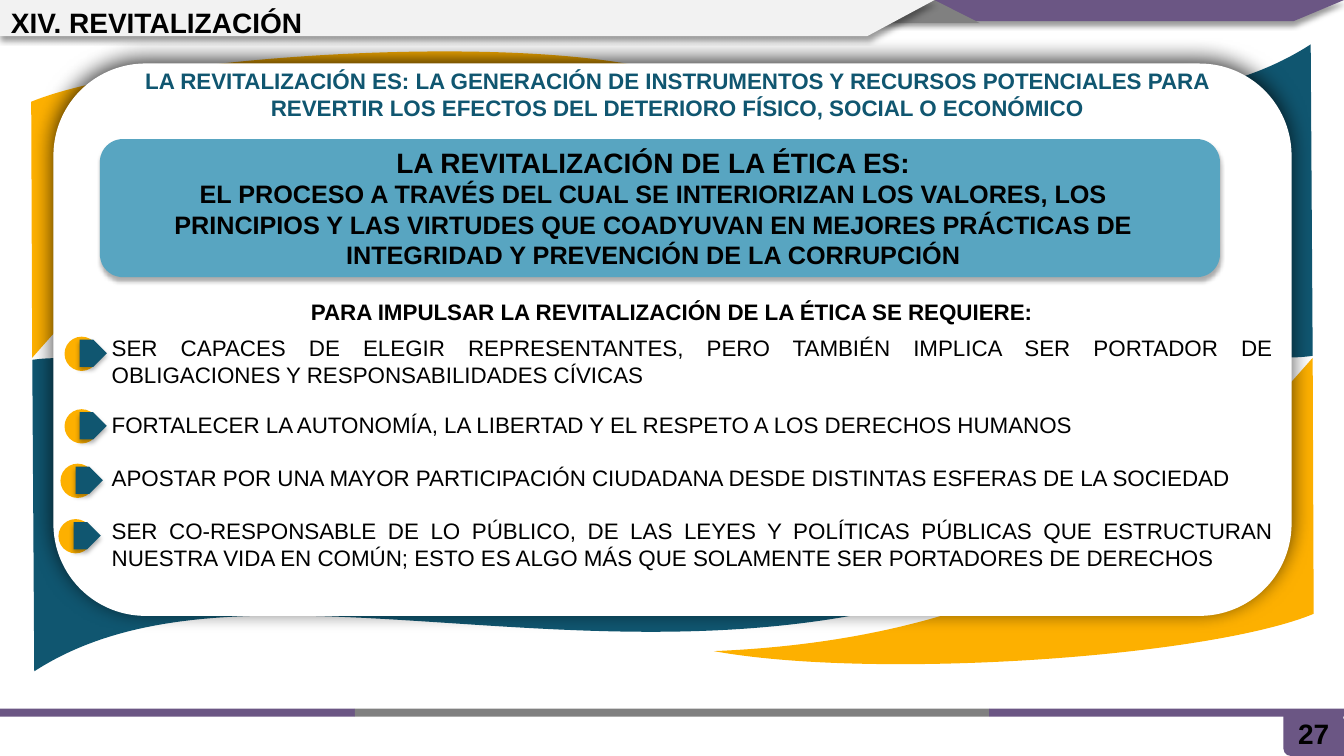
from dataclasses import dataclass

from lxml import etree
from pptx import Presentation
from pptx.dml.color import RGBColor
from pptx.enum.shapes import MSO_SHAPE as Preset
from pptx.enum.text import MSO_ANCHOR as Anchor, PP_ALIGN as Align
from pptx.oxml.ns import qn
from pptx.util import Inches, Pt


@dataclass(frozen=True)
class Theme:
    """Colours, font and type sizes of the slide."""
    purple: str = "6B5684"
    grey: str = "808080"
    pale: str = "F2F2F2"
    teal: str = "105670"
    amber: str = "FDB000"
    sky: str = "58A5C1"
    white: str = "FFFFFF"
    black: str = "000000"
    font: str = "Arial"
    heading: int = 20
    strong: int = 18
    body: int = 16


THEME = Theme()
WIDTH, HEIGHT = 13.33, 7.5
CENTRE_X, CENTRE_Y = 6.67, 3.55
HEADER_SHADOW = (40, 4, 3, 90)
SOFT_SHADOW = (32, 3.5, 2.2, 90)
FRAME_SHADOW = (75, 15, 3, 270)

TEAL_BOUNDS = (0.32, 3.55, 10.41, 3.11)
TEAL_SWOOSH = [
    [(0.32, 3.57)],
    [(0.34, 6.66)],
    [(2.64, 5.17), (6.84, 7.4), (10.73, 5.33)],
    [(7.31, 5.89), (2.04, 3.32), (0.32, 3.57)],
]
AMBER_BOUNDS = (7.08, 3.55, 5.96, 3.04)
AMBER_SWOOSH = [
    [(13.03, 6.09)],
    [(13.02, 3.55)],
    [(11.95, 4.77), (10.52, 6.32), (7.08, 6.46)],
    [(8.68, 6.75), (11.99, 6.52), (13.03, 6.09)],
]
REQUIREMENTS = [
    "SER CAPACES DE ELEGIR REPRESENTANTES, PERO TAMBIÉN IMPLICA SER PORTADOR DE "
    "OBLIGACIONES Y RESPONSABILIDADES CÍVICAS",
    "FORTALECER LA AUTONOMÍA, LA LIBERTAD Y EL RESPETO A LOS DERECHOS HUMANOS",
    "APOSTAR POR UNA MAYOR PARTICIPACIÓN CIUDADANA DESDE DISTINTAS ESFERAS DE LA SOCIEDAD",
    "SER CO-RESPONSABLE DE LO PÚBLICO, DE LAS LEYES Y POLÍTICAS PÚBLICAS QUE ESTRUCTURAN "
    "NUESTRA VIDA EN COMÚN; ESTO ES ALGO MÁS QUE SOLAMENTE SER PORTADORES DE DERECHOS",
]
REQUIREMENT_GAPS = [0, 16, 19, 19]
PINS = [(0.64, 3.34), (0.64, 4.06), (0.6, 4.6), (0.58, 5.15)]


def paint(shape, colour, shadow=None):
    """Give a shape a plain fill, no line and an optional shadow."""
    shape.fill.solid()
    shape.fill.fore_color.rgb = RGBColor.from_string(colour)
    shape.line.fill.background()
    shape.shadow.inherit = False
    if shadow:
        alpha, blur, distance, angle = shadow
        effects = shape._element.spPr.find(qn("a:effectLst"))
        outer = etree.SubElement(
            effects, qn("a:outerShdw"), blurRad=str(Pt(blur)), dist=str(Pt(distance)),
            dir=str(angle * 60000), algn="ctr", rotWithShape="0")
        tint = etree.SubElement(outer, qn("a:srgbClr"), val=THEME.black)
        etree.SubElement(tint, qn("a:alpha"), val=str(alpha * 1000))


def add_preset(page, preset, place, colour, shadow=None):
    """Add a painted preset shape."""
    shape = page.shapes.add_shape(preset, *map(Inches, place))
    paint(shape, colour, shadow)
    return shape


def add_outline(page, points, colour, shadow=None):
    """Add a painted closed outline."""
    corners = [(Inches(x), Inches(y)) for x, y in points]
    builder = page.shapes.build_freeform(*corners[0])
    builder.add_line_segments(corners[1:], close=True)
    shape = builder.convert_to_shape()
    paint(shape, colour, shadow)
    return shape


def add_swoosh(page, segments, bounds, colour):
    """Add a closed outline of straight and cubic segments."""
    left, top, width, height = bounds
    right, bottom = left + width, top + height
    shape = add_outline(page, [(left, top), (right, top), (right, bottom), (left, bottom)],
                        colour)
    route = shape._element.spPr.find(".//" + qn("a:path"))
    for command in list(route):
        route.remove(command)
    for index, segment in enumerate(segments):
        kind = "a:cubicBezTo" if len(segment) == 3 else "a:lnTo" if index else "a:moveTo"
        command = etree.SubElement(route, qn(kind))
        for x, y in segment:
            etree.SubElement(command, qn("a:pt"), x=str(Inches(x - left)),
                             y=str(Inches(y - top)))
    etree.SubElement(route, qn("a:close"))


def half_turn(segments, bounds):
    """Turn a swoosh and its bounds around the centre of the frame."""
    left, top, width, height = bounds
    turned = [[(2 * CENTRE_X - x, 2 * CENTRE_Y - y) for x, y in segment]
              for segment in segments]
    return turned, (2 * CENTRE_X - left - width, 2 * CENTRE_Y - top - height, width, height)


def add_bullet(para):
    """Give a paragraph a hanging bullet."""
    props = para._p.get_or_add_pPr()
    props.set("marL", str(Inches(0.31)))
    props.set("indent", str(Inches(-0.31)))
    etree.SubElement(props, qn("a:buFont"), typeface=THEME.font)
    etree.SubElement(props, qn("a:buChar"), char="•")


def add_text(page, place, lines, size, colour=THEME.black, bold=True,
             align=Align.CENTER, anchor=Anchor.TOP, bullets=False):
    """Add a wrapped text box with one paragraph for each line."""
    box = page.shapes.add_textbox(*map(Inches, place))
    frame = box.text_frame
    frame.word_wrap = True
    frame.vertical_anchor = anchor
    for index, line in enumerate(lines):
        para = frame.add_paragraph() if index else frame.paragraphs[0]
        para.text = line
        para.alignment = align
        if bullets:
            add_bullet(para)
        para.font.name = THEME.font
        para.font.size = Pt(size)
        para.font.bold = bold
        para.font.color.rgb = RGBColor.from_string(colour)
    return frame


def add_header(page):
    """Draw the title band."""
    add_outline(page, [(6.3, 0), (WIDTH, 0), (12.83, 0.21), (6.3, 0.21)],
                THEME.purple, HEADER_SHADOW)
    add_preset(page, Preset.ISOSCELES_TRIANGLE, (8.81, 0, 0.91, 0.23), THEME.grey)
    add_outline(page, [(0, 0), (9.27, 0), (8.6, 0.36), (0, 0.36)],
                THEME.pale, HEADER_SHADOW)
    add_text(page, (0.01, 0, 10.13, 0.44), ["XIV. REVITALIZACIÓN"], THEME.heading,
             align=Align.LEFT, anchor=Anchor.MIDDLE)


def add_footer(page):
    """Draw the bottom bars and the page number."""
    tab = add_preset(page, Preset.ROUND_2_DIAG_RECTANGLE, (12.73, 7.07, 0.6, 0.43),
                     THEME.purple)
    tab.adjustments[0], tab.adjustments[1] = 0, 0.17
    for left, width, colour in ((0, 3.52, THEME.purple), (3.52, 6.29, THEME.grey),
                                (9.81, 3.52, THEME.purple)):
        add_preset(page, Preset.RECTANGLE, (left, 7.03, width, 0.08), colour)
    add_text(page, (12.73, 7.06, 0.6, 0.44), ["27"], THEME.heading)


def add_frame(page):
    """Draw the swooshes, each with its half turn, behind the white panel."""
    teal, amber = (TEAL_SWOOSH, TEAL_BOUNDS), (AMBER_SWOOSH, AMBER_BOUNDS)
    for pair in ((teal, amber), (half_turn(*teal), half_turn(*amber))):
        for swoosh, colour in zip(pair, (THEME.teal, THEME.amber)):
            add_swoosh(page, *swoosh, colour)
    add_preset(page, Preset.ROUNDED_RECTANGLE, (0.53, 0.63, 12.28, 5.48),
               THEME.white, FRAME_SHADOW)


def add_pin(page, left, top):
    """Draw one list marker."""
    add_preset(page, Preset.OVAL, (left, top, 0.34, 0.34), THEME.amber)
    add_preset(page, Preset.PENTAGON, (left + 0.15, top + 0.03, 0.27, 0.27),
               THEME.teal, SOFT_SHADOW)


def add_requirements(page):
    """Write the bulleted list and cover its bullets with pins."""
    frame = add_text(page, (0.7, 3.27, 12.03, 2.5), REQUIREMENTS, THEME.body,
                     bold=False, align=Align.JUSTIFY, bullets=True)
    for para, gap in zip(frame.paragraphs, REQUIREMENT_GAPS):
        para.space_before = Pt(gap)
    for left, top in PINS:
        add_pin(page, left, top)


def add_banner(page):
    """Draw the definition banner."""
    add_preset(page, Preset.ROUNDED_RECTANGLE, (0.99, 1.38, 11.11, 1.37),
               THEME.sky, SOFT_SHADOW)
    frame = add_text(page, (1.18, 1.39, 10.6, 1.35), [
        "LA REVITALIZACIÓN DE LA ÉTICA ES:",
        "EL PROCESO A TRAVÉS DEL CUAL SE INTERIORIZAN LOS VALORES, LOS PRINCIPIOS Y LAS "
        "VIRTUDES QUE COADYUVAN EN MEJORES PRÁCTICAS DE INTEGRIDAD Y PREVENCIÓN DE LA "
        "CORRUPCIÓN"], THEME.strong)
    frame.paragraphs[0].font.size = Pt(THEME.heading)


def main():
    """Build and save the slide."""
    deck = Presentation()
    deck.slide_width, deck.slide_height = Inches(WIDTH), Inches(HEIGHT)
    page = deck.slides.add_slide(deck.slide_layouts[6])
    add_header(page)
    add_footer(page)
    add_frame(page)
    add_text(page, (2.73, 2.91, 7.87, 0.37),
             ["PARA IMPULSAR LA REVITALIZACIÓN DE LA ÉTICA SE REQUIERE:"], THEME.body)
    add_requirements(page)
    add_text(page, (1.02, 0.62, 11.4, 0.64), [
        "LA REVITALIZACIÓN ES: LA GENERACIÓN DE INSTRUMENTOS Y RECURSOS POTENCIALES PARA "
        "REVERTIR LOS EFECTOS DEL DETERIORO FÍSICO, SOCIAL O ECONÓMICO"],
        THEME.body, THEME.teal)
    add_banner(page)
    deck.save("out.pptx")


if __name__ == "__main__":
    main()
